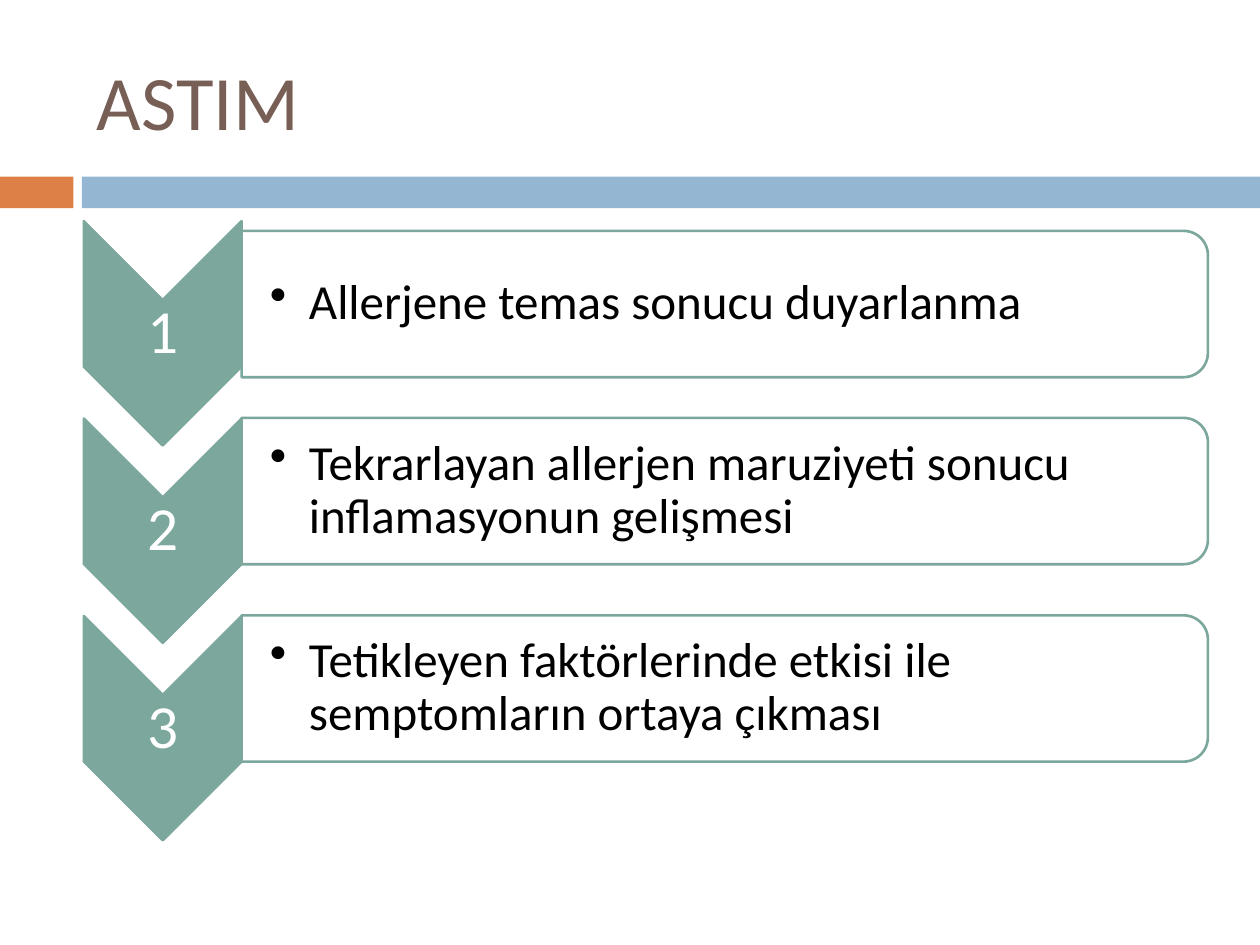
from lxml import etree
from pptx import Presentation
from pptx.dml.color import RGBColor
from pptx.enum import shapes, text
from pptx.oxml.ns import qn
from pptx.util import Cm, Pt

ORANGE = RGBColor(0xDD, 0x80, 0x47)
BLUE = RGBColor(0x94, 0xB6, 0xD2)
GREEN = RGBColor(0x7B, 0xA7, 0x9D)
BROWN = RGBColor(0x77, 0x5F, 0x55)
WHITE = RGBColor(0xFF, 0xFF, 0xFF)
BLACK = RGBColor(0, 0, 0)

STEPS = [
    "Allerjene temas sonucu duyarlanma",
    "Tekrarlayan allerjen maruziyeti sonucu inflamasyonun gelişmesi",
    "Tetikleyen faktörlerinde etkisi ile semptomların ortaya çıkması",
]
FIRST_CENTER, STEP_PITCH = 6.72, 3.98
PANEL_RISE, FIRST_PANEL_RISE = 0.8, 0.59


def add_solid(slide, kind, left, top, width, height, fill, line=None):
    solid = slide.shapes.add_shape(kind, Cm(left), Cm(top), Cm(width), Cm(height))
    solid.shadow.inherit = False
    solid.fill.solid()
    solid.fill.fore_color.rgb = fill
    if line is None:
        solid.line.fill.background()
    else:
        solid.line.color.rgb = line
        solid.line.width = Pt(1.5)
    return solid


def add_turned(slide, kind, center_x, center_y, width, height, fill):
    """Add a green-edged shape turned a quarter; width and height are before turning."""
    turned = add_solid(slide, kind, center_x - width / 2, center_y - height / 2,
                       width, height, fill, GREEN)
    turned.rotation = 90
    return turned


def style_paragraph(paragraph, size, color):
    paragraph.font.name = "Calibri"
    paragraph.font.size = Pt(size)
    paragraph.font.color.rgb = color


def add_label(slide, words, left, center_y, width, height, size, color, inset=0.05):
    label = slide.shapes.add_textbox(Cm(left), Cm(center_y - height / 2),
                                     Cm(width), Cm(height))
    frame = label.text_frame
    frame.word_wrap = True
    frame.vertical_anchor = text.MSO_ANCHOR.MIDDLE
    frame.margin_left = Cm(inset)
    frame.margin_top = frame.margin_right = frame.margin_bottom = Cm(0.05)
    paragraph = frame.paragraphs[0]
    paragraph.text = words
    paragraph.line_spacing = 0.9
    style_paragraph(paragraph, size, color)
    return paragraph


def add_bullet(paragraph):
    properties = paragraph._p.get_or_add_pPr()
    properties.set("marL", str(Cm(0.79)))
    properties.set("indent", str(-Cm(0.79)))
    bullet = etree.Element(qn("a:buChar"), char="•")
    default_run = properties.find(qn("a:defRPr"))
    if default_run is None:
        properties.append(bullet)
    else:
        default_run.addprevious(bullet)


def add_step(slide, number, description, center_y, panel_y):
    kinds = shapes.MSO_SHAPE
    add_turned(slide, kinds.CHEVRON, 3.28, center_y, 4.52, 3.18, GREEN)
    numeral = add_label(slide, str(number), 1.7, center_y, 3.18, 1.35, 35, WHITE)
    numeral.alignment = text.PP_ALIGN.CENTER

    panel = add_turned(slide, kinds.ROUND_2_SAME_RECTANGLE, 14.61, panel_y,
                       2.95, 19.48, WHITE)
    panel_color = panel._element.spPr.find(qn("a:solidFill"))[0]
    etree.SubElement(panel_color, qn("a:alpha"), val="90000")
    add_bullet(add_label(slide, description, 4.88, panel_y, 19.33, 2.64,
                         28, BLACK, inset=0.56))


def set_title(slide, words):
    title = slide.shapes.title
    title.left, title.top, title.width, title.height = (
        Cm(1.7), Cm(0.64), Cm(22.66), Cm(2.74))
    title.text_frame.vertical_anchor = text.MSO_ANCHOR.MIDDLE
    paragraph = title.text_frame.paragraphs[0]
    paragraph.text = words
    paragraph.alignment = text.PP_ALIGN.LEFT
    style_paragraph(paragraph, 44, BROWN)


def main():
    deck = Presentation()
    deck.slide_width, deck.slide_height = Cm(25.4), Cm(19.05)
    slide = deck.slides.add_slide(deck.slide_layouts[5])
    set_title(slide, "ASTIM")
    for left, width, color in ((0, 1.48, ORANGE), (1.65, 23.75, BLUE)):
        add_solid(slide, shapes.MSO_SHAPE.RECTANGLE, left, 3.56, width, 0.64, color)

    for index, description in enumerate(STEPS):
        center_y = FIRST_CENTER + index * STEP_PITCH
        rise = PANEL_RISE if index else FIRST_PANEL_RISE
        add_step(slide, index + 1, description, center_y, center_y - rise)
    deck.save("out.pptx")


if __name__ == "__main__":
    main()
